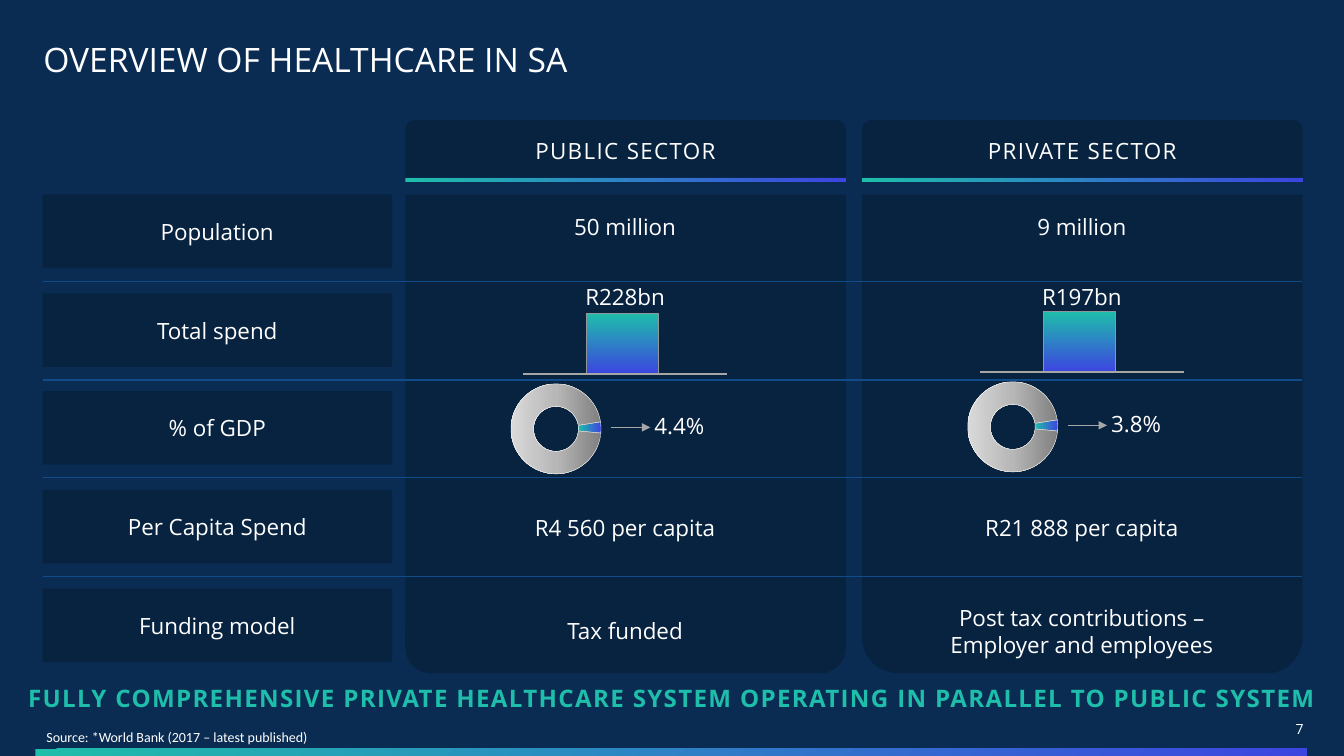
from copy import deepcopy

from lxml.etree import SubElement
from pptx import Presentation
from pptx.chart.data import CategoryChartData
from pptx.dml.color import RGBColor
from pptx.enum.chart import XL_CHART_TYPE
from pptx.enum.shapes import MSO_CONNECTOR, MSO_SHAPE
from pptx.enum.text import MSO_ANCHOR, MSO_AUTO_SIZE, PP_ALIGN
from pptx.oxml.ns import qn
from pptx.util import Pt

PX = 9144  # 100 px to the inch
NAVY = RGBColor(0x0A, 0x2C, 0x52)
PANEL = RGBColor(0x08, 0x23, 0x40)
RULE = RGBColor(0x11, 0x4B, 0x8A)
TEAL = RGBColor(0x1E, 0xBE, 0xAA)
INDIGO = RGBColor(0x3D, 0x45, 0xE0)
WHITE = RGBColor(0xFF, 0xFF, 0xFF)
AXIS = RGBColor(0xA6, 0xA6, 0xA6)
BAR_EDGE = RGBColor(0x91, 0x96, 0x98)
CHART_TEXT = RGBColor(0x29, 0x2B, 0x2C)
GREY_DARK = RGBColor(0x80, 0x80, 0x80)
GREY_MID = RGBColor(0xB7, 0xB7, 0xB7)
GREY_LIGHT = RGBColor(0xD9, 0xD9, 0xD9)

ROWS = ["Population", "Total spend", "% of GDP", "Per Capita Spend", "Funding model"]
ROW_TOP, ROW_PITCH = 193, 97.7
SECTOR_W = 437
# left, lift of the graphics, corner, heading, population, spend, GDP, per capita, funding
SECTORS = [
    (402, 0, 0.059, "PUBLIC SECTOR", "50 million", "R228bn", "4.4%",
     "R4 560 per capita", ["Tax funded"]),
    (855, 2, 0.082, "PRIVATE SECTOR", "9 million", "R197bn", "3.8%",
     "R21 888 per capita", ["Post tax contributions –", "Employer and employees"]),
]


class Deck:
    font = "Open Sans"
    size = 16

    def __init__(self, width, height):
        self.prs = Presentation()
        self.prs.slide_width, self.prs.slide_height = width * PX, height * PX
        self.s = self.prs.slides.add_slide(self.prs.slide_layouts[5])
        self.s.background.fill.solid()
        self.s.background.fill.fore_color.rgb = NAVY

    def gradient(self, fill, angle, first=TEAL, last=INDIGO):
        fill.gradient()
        fill.gradient_angle = -angle % 360
        for stop, colour in zip(fill.gradient_stops, (first, last)):
            stop.color.rgb = colour

    def put_text(self, tf, lines, align=PP_ALIGN.CENTER, anchor=MSO_ANCHOR.MIDDLE,
                 margins=(0, 5, 0, 5), size=size, font=font, spacing=None, bold=False, tracking=0):
        tf.word_wrap = True
        tf.auto_size = MSO_AUTO_SIZE.NONE
        tf.vertical_anchor = anchor
        tf.margin_left, tf.margin_top, tf.margin_right, tf.margin_bottom = (m * PX for m in margins)
        for i, line in enumerate(lines):
            p = tf.add_paragraph() if i else tf.paragraphs[0]
            p.alignment = align
            if spacing:
                p.line_spacing = spacing
            r = p.add_run()
            r.text = line
            r.font.name, r.font.size, r.font.bold = font, Pt(size), bold
            r.font.color.rgb = WHITE
            if tracking:
                r.font._element.set("spc", str(tracking))
        return tf

    def title(self, x, y, w, h, text):
        sp = self.s.shapes.title
        sp.left, sp.top, sp.width, sp.height = x * PX, y * PX, w * PX, h * PX
        self.put_text(sp.text_frame, [text], PP_ALIGN.LEFT, MSO_ANCHOR.TOP, (0, 0, 0, 0),
                      size=24, spacing=0.9)

    def text(self, x, y, w, h, *lines, **style):
        sp = self.s.shapes.add_textbox(x * PX, y * PX, w * PX, h * PX)
        return self.put_text(sp.text_frame, lines, **style)

    def box(self, x, y, w, h, kind=MSO_SHAPE.RECTANGLE, corners=(), angle=None):
        sp = self.s.shapes.add_shape(kind, x * PX, y * PX, w * PX, h * PX)
        sp.shadow.inherit = False
        sp.line.fill.background()
        for i, corner in enumerate(corners):
            sp.adjustments[i] = corner
        if angle is None:
            sp.fill.solid()
            sp.fill.fore_color.rgb = PANEL
        else:
            self.gradient(sp.fill, angle)
        return sp

    def line(self, x1, x2, y, colour, arrow=False):
        c = self.s.shapes.add_connector(MSO_CONNECTOR.STRAIGHT, x1 * PX, y * PX, x2 * PX, y * PX)
        c.line.color.rgb = colour
        c.line.width = Pt(1)
        if arrow:
            SubElement(c._element.spPr.find(qn("a:ln")), qn("a:tailEnd"), type="triangle")
        SubElement(c._element.spPr, qn("a:effectLst"))

    def doughnut(self, x, y, w, h):
        data = CategoryChartData()
        data.categories = ["1", "2"]
        data.add_series("Series 1", (4, 96))
        chart = self.s.shapes.add_chart(
            XL_CHART_TYPE.DOUGHNUT, x * PX, y * PX, w * PX, h * PX, data).chart
        chart.has_legend = chart.has_title = False
        chart.font.name, chart.font.size = self.font, Pt(10)
        chart.font.color.rgb = CHART_TEXT
        plot = chart.plots[0]
        plot.vary_by_categories = True
        for i, colours in enumerate([(INDIGO, TEAL), (GREY_DARK, GREY_LIGHT)]):
            fmt = plot.series[0].points[i].format
            self.gradient(fmt.fill, 180, *colours)
            fmt.line.color.rgb = WHITE
            fmt.line.width = Pt(0.25)
        # Middle stop of the grey ring
        stops = chart.element.xpath(".//a:gsLst")[1]
        middle = deepcopy(stops[0])
        middle.set("pos", "50000")
        middle[0].set("val", str(GREY_MID))
        stops.insert(1, middle)
        for tag, value in (("firstSliceAng", 81), ("holeSize", 59)):
            chart.element.xpath(f".//c:{tag}")[0].set("val", str(value))


def main():
    d = Deck(1333, 750)
    d.title(43, 43, 1249, 37, "OVERVIEW OF HEALTHCARE IN SA")
    inset = (4, 4, 4, 4)

    # Row labels
    for i, label in enumerate(ROWS):
        sp = d.box(42, round(ROW_TOP + i * ROW_PITCH), 347, 73)
        d.put_text(sp.text_frame, [label], margins=inset)

    # Sector panels and headings
    for x, _, corner, heading, *_ in SECTORS:
        d.box(x, 177, SECTOR_W, 4, angle=0)
        d.box(x, ROW_TOP, SECTOR_W, 475, MSO_SHAPE.ROUND_2_SAME_RECTANGLE, (0, corner))
        sp = d.box(x, 119, SECTOR_W, 57, MSO_SHAPE.ROUND_2_SAME_RECTANGLE)
        d.put_text(sp.text_frame, [heading], margins=inset, tracking=100)

    # Row separators
    for i in range(len(ROWS) - 1):
        d.line(43, 1291, round(279 + i * ROW_PITCH), RULE)

    # Sector values
    for x, lift, _, _, population, spend, gdp, per_capita, funding in SECTORS:
        d.text(x + 154, 191, 128, 68, population)
        bar = d.box(x + 180, 311 - lift, 71, 60, angle=90)
        bar.line.color.rgb = BAR_EDGE
        bar.line.width = Pt(0.5)
        d.line(x + 117, x + 319, 371 - lift, AXIS)
        d.text(x + 150, 276, 136, 37, spend)
        d.doughnut(x + 62, 367 - lift, 175, 117)
        d.text(x + 247, 404 - lift, 127, 37, gdp, align=PP_ALIGN.LEFT)
        d.line(x + 204, x + 243, 424 - lift, AXIS, arrow=True)
        d.text(x + 118, 505, 200, 37, per_capita)
        d.text(x + 78, 594 + 13 * (len(funding) == 1), 280, 37 if len(funding) == 1 else 64,
               *funding)

    # Key message
    tf = d.text(0, 676, 1333, 37,
                "FULLY COMPREHENSIVE PRIVATE HEALTHCARE SYSTEM OPERATING IN PARALLEL TO PUBLIC SYSTEM",
                margins=(0, 4, 0, 8), size=17.2, bold=True, tracking=100)
    d.gradient(tf.paragraphs[0].runs[0].font.fill, 0)

    # Footer
    d.text(42, 714, 346, 22, "Source: *World Bank (2017 – latest published)", align=PP_ALIGN.LEFT,
           margins=inset, size=10, font="Calibri", spacing=Pt(20))
    d.text(1262, 715, 31, 17, "7", align=PP_ALIGN.RIGHT, anchor=MSO_ANCHOR.TOP,
           margins=(0, 0, 0, 0), size=10)
    d.box(35, 743, 1261, 8, angle=45)
    d.prs.save("out.pptx")


if __name__ == "__main__":
    main()
